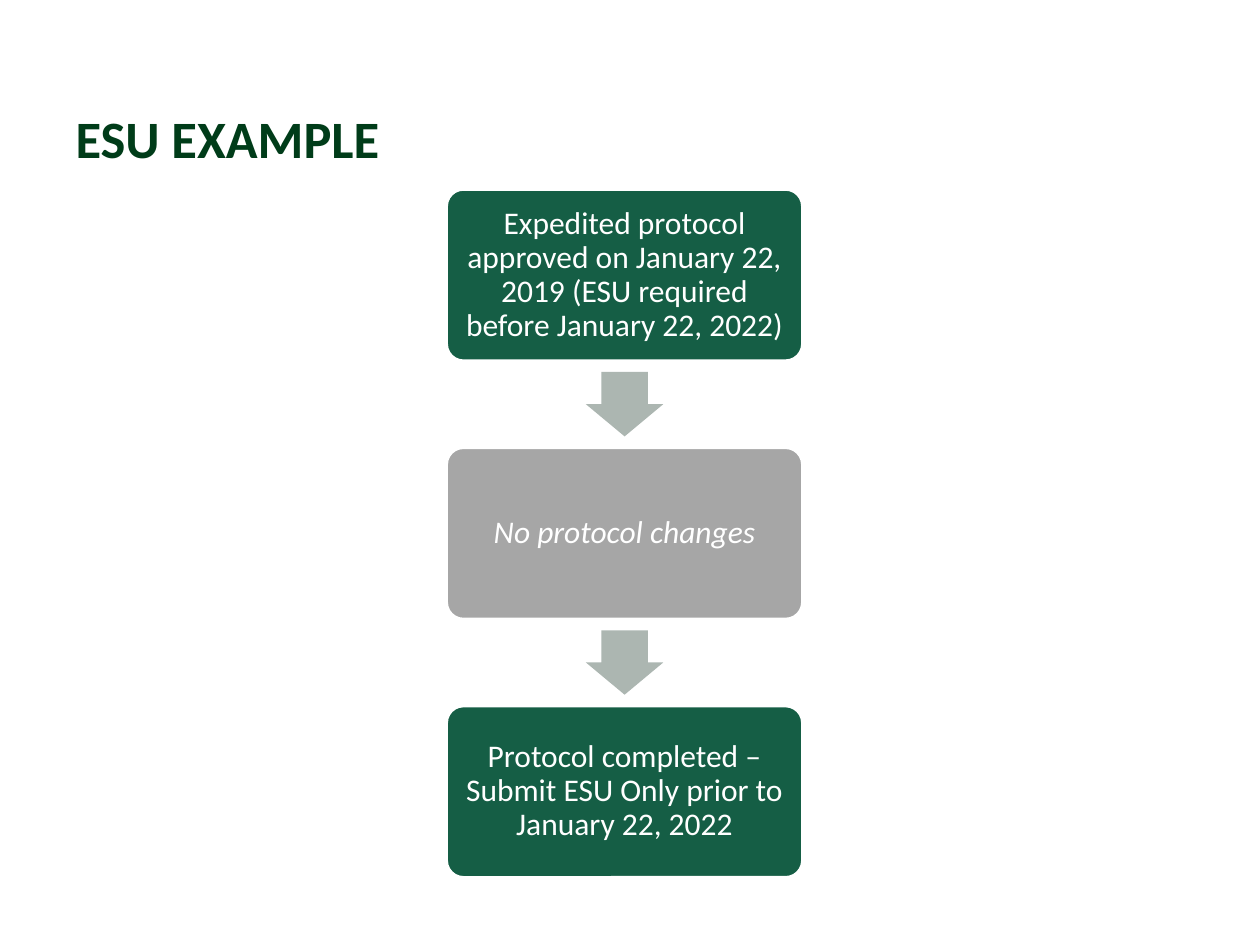
import pptx
import pptx.util
import pptx.dml.color
import pptx.enum.shapes
import pptx.enum.text

Pt = pptx.util.Pt
SHAPES = pptx.enum.shapes.MSO_SHAPE
ALIGN = pptx.enum.text.PP_ALIGN
ANCHOR = pptx.enum.text.MSO_ANCHOR
COLORS = {"title": "003C19", "green": "155E45", "gray": "A6A6A6",
          "arrow": "ACB6B1", "white": "FFFFFF"}


def rgb(name):
    return pptx.dml.color.RGBColor.from_string(COLORS[name])


def style_text(paragraph, size, color, align):
    paragraph.alignment = align
    for run in paragraph.runs:
        run.font.name = "Calibri"
        run.font.size = Pt(size)
        run.font.color.rgb = rgb(color)


deck = pptx.Presentation()
deck.slide_width, deck.slide_height = Pt(720), Pt(540)
slide = deck.slides.add_slide(deck.slide_layouts[5])

heading = slide.shapes.title
heading.left, heading.top, heading.width, heading.height = Pt(36), Pt(57), Pt(648), Pt(77)
heading.text_frame.text = "ESU EXAMPLE"
heading.text_frame.vertical_anchor = ANCHOR.TOP
style_text(heading.text_frame.paragraphs[0], 30, "title", ALIGN.LEFT)
heading.text_frame.paragraphs[0].runs[0].font.bold = True

steps = [
    ("Expedited protocol approved on January 22, 2019 (ESU required before January 22, 2022)", "green", False),
    ("No protocol changes", "gray", True),
    ("Protocol completed – Submit ESU Only prior to January 22, 2022", "green", False),
]
step_left, first_top, step_width, step_height = 255, 108, 203.8, 98.4
pitch = 147.6
arrow_length, arrow_width = 36.8, 44.2
arrow_left = step_left + (step_width - arrow_length) / 2

for index, (wording, fill, italic) in enumerate(steps):
    top = first_top + index * pitch
    step = slide.shapes.add_shape(SHAPES.ROUNDED_RECTANGLE, Pt(step_left), Pt(top),
                                  Pt(step_width), Pt(step_height))
    step.adjustments[0] = 0.1
    step.shadow.inherit = False
    step.fill.solid()
    step.fill.fore_color.rgb = rgb(fill)
    step.line.color.rgb = rgb("white")
    step.line.width = Pt(2)
    frame = step.text_frame
    frame.word_wrap = True
    frame.vertical_anchor = ANCHOR.MIDDLE
    frame.margin_left = frame.margin_right = frame.margin_top = frame.margin_bottom = Pt(8)
    frame.text = wording
    style_text(frame.paragraphs[0], 18, "white", ALIGN.CENTER)
    frame.paragraphs[0].line_spacing = 0.9
    frame.paragraphs[0].runs[0].font.italic = italic

    if index < len(steps) - 1:
        arrow_top = top + (step_height + pitch - arrow_width) / 2
        arrow = slide.shapes.add_shape(SHAPES.RIGHT_ARROW, Pt(arrow_left), Pt(arrow_top),
                                       Pt(arrow_length), Pt(arrow_width))
        arrow.rotation = 90
        arrow.adjustments[0] = 0.6
        arrow.adjustments[1] = 0.5
        arrow.shadow.inherit = False
        arrow.fill.solid()
        arrow.fill.fore_color.rgb = rgb("arrow")
        arrow.line.fill.background()

deck.save("out.pptx")
